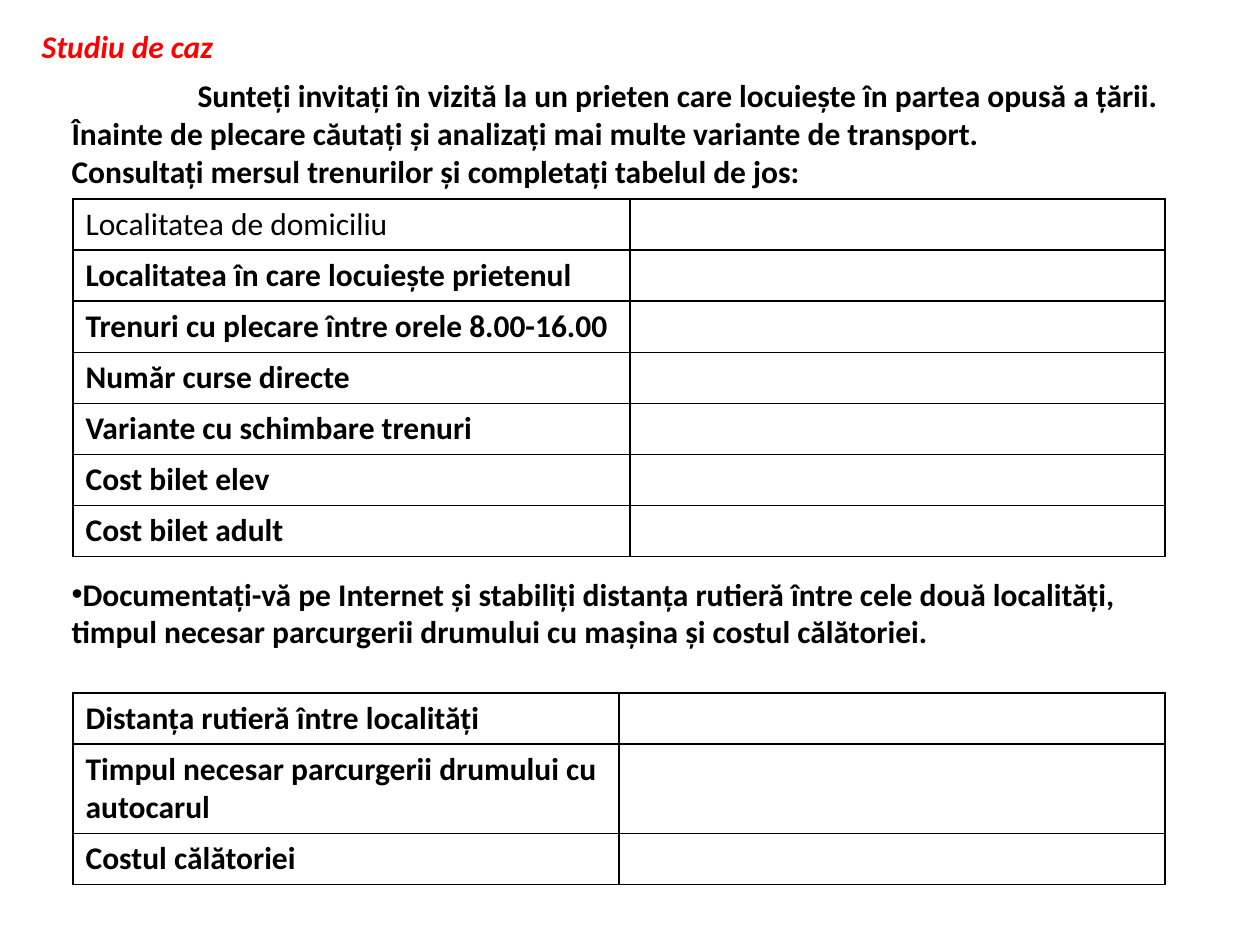
from lxml import etree
from pptx import Presentation
from pptx.dml.color import RGBColor
from pptx.enum import text
from pptx.oxml import ns
from pptx.util import Emu, Pt

PX = 914400 / 126
FONT = "Calibri"
COLORS = {"heading": "FF0000", "ink": "000000"}

TRAIN_ROWS = [
    "Localitatea de domiciliu",
    "Localitatea în care locuiește prietenul",
    "Trenuri cu plecare între orele 8.00-16.00",
    "Număr curse directe",
    "Variante cu schimbare trenuri",
    "Cost bilet elev",
    "Cost bilet adult",
]
ROAD_ROWS = [
    "Distanța rutieră între localități",
    "Timpul necesar parcurgerii drumului cu autocarul",
    "Costul călătoriei",
]
INTRO = [
    "Sunteți invitați în vizită la un prieten care locuiește în partea opusă a țării.",
    "Înainte de plecare căutați și analizați mai multe variante de transport.",
    "Consultați mersul trenurilor și completați tabelul de jos:",
]
ROAD_TASK = ("Documentați-vă pe Internet și stabiliți distanța rutieră între cele două "
             "localități, timpul necesar parcurgerii drumului cu mașina și costul călătoriei.")


def px(n):
    return Emu(round(n * PX))


def style(paragraph, color="ink", bold=True, italic=False):
    font = paragraph.font
    font.name, font.size, font.bold, font.italic = FONT, Pt(18), bold, italic
    font.color.rgb = RGBColor.from_string(COLORS[color])
    paragraph.alignment = text.PP_ALIGN.LEFT


def place(holder, box):
    holder.left, holder.top, holder.width, holder.height = map(px, box)
    frame = holder.text_frame
    frame.word_wrap = True
    frame.auto_size = text.MSO_AUTO_SIZE.NONE
    frame.vertical_anchor = text.MSO_ANCHOR.TOP
    return frame


def set_bullet(paragraph, bullet=None, first_indent=0):
    props = paragraph._p.get_or_add_pPr()
    props.set("marL", "0")
    props.set("indent", str(px(first_indent)))
    if bullet:
        face = etree.SubElement(props, ns.qn("a:buFont"))
        face.set("typeface", "Arial")
        etree.SubElement(props, ns.qn("a:buChar")).set("char", bullet)
    else:
        etree.SubElement(props, ns.qn("a:buNone"))


def add_heading(slide, box):
    frame = place(slide.shapes.title, box)
    frame.text = "Studiu de caz"
    style(frame.paragraphs[0], "heading", italic=True)


def add_instructions(slide, box):
    frame = place(slide.placeholders[1], box)
    frame.text = "\n".join(INTRO + [ROAD_TASK])
    *intro, road_task = frame.paragraphs
    for paragraph in frame.paragraphs:
        style(paragraph)
        paragraph.space_before = Pt(0)
    road_task.space_before = Pt(220)  # room for the train table
    for i, paragraph in enumerate(intro):
        set_bullet(paragraph, first_indent=126 if i == 0 else 0)
    set_bullet(road_task, "•")


def add_borders(cell):
    props = cell._tc.get_or_add_tcPr()
    for i, side in enumerate(("lnL", "lnR", "lnT", "lnB")):
        line = etree.Element(ns.qn(f"a:{side}"), w=str(Pt(1)))
        fill = etree.SubElement(line, ns.qn("a:solidFill"))
        etree.SubElement(fill, ns.qn("a:srgbClr")).set("val", COLORS["ink"])
        props.insert(i, line)


def add_form(slide, left, top, col_widths, row_heights, labels, plain_rows=()):
    frame = slide.shapes.add_table(len(labels), len(col_widths), px(left), px(top),
                                   px(sum(col_widths)), px(sum(row_heights)))
    form = frame.table
    form.first_row = form.horz_banding = False
    for column, width in zip(form.columns, col_widths):
        column.width = px(width)
    for i, (row, height, label) in enumerate(zip(form.rows, row_heights, labels)):
        row.height = px(height)
        row.cells[0].text = label
        for cell in row.cells:
            cell.fill.background()
            style(cell.text_frame.paragraphs[0], bold=i not in plain_rows)
            add_borders(cell)


def main():
    deck = Presentation()
    deck.slide_width, deck.slide_height = px(1260), px(945)
    slide = deck.slides.add_slide(deck.slide_layouts[1])

    # Heading and instructions
    add_heading(slide, (29, 21, 472, 50))
    add_instructions(slide, (59, 70, 1123, 661))

    # Forms to fill in: train journey, then road journey
    add_form(slide, 73, 199, (557, 535), [50.4] * 7, TRAIN_ROWS, plain_rows=(0,))
    add_form(slide, 73, 693, (546, 546), (50, 88, 50), ROAD_ROWS)

    deck.save("out.pptx")


if __name__ == "__main__":
    main()
